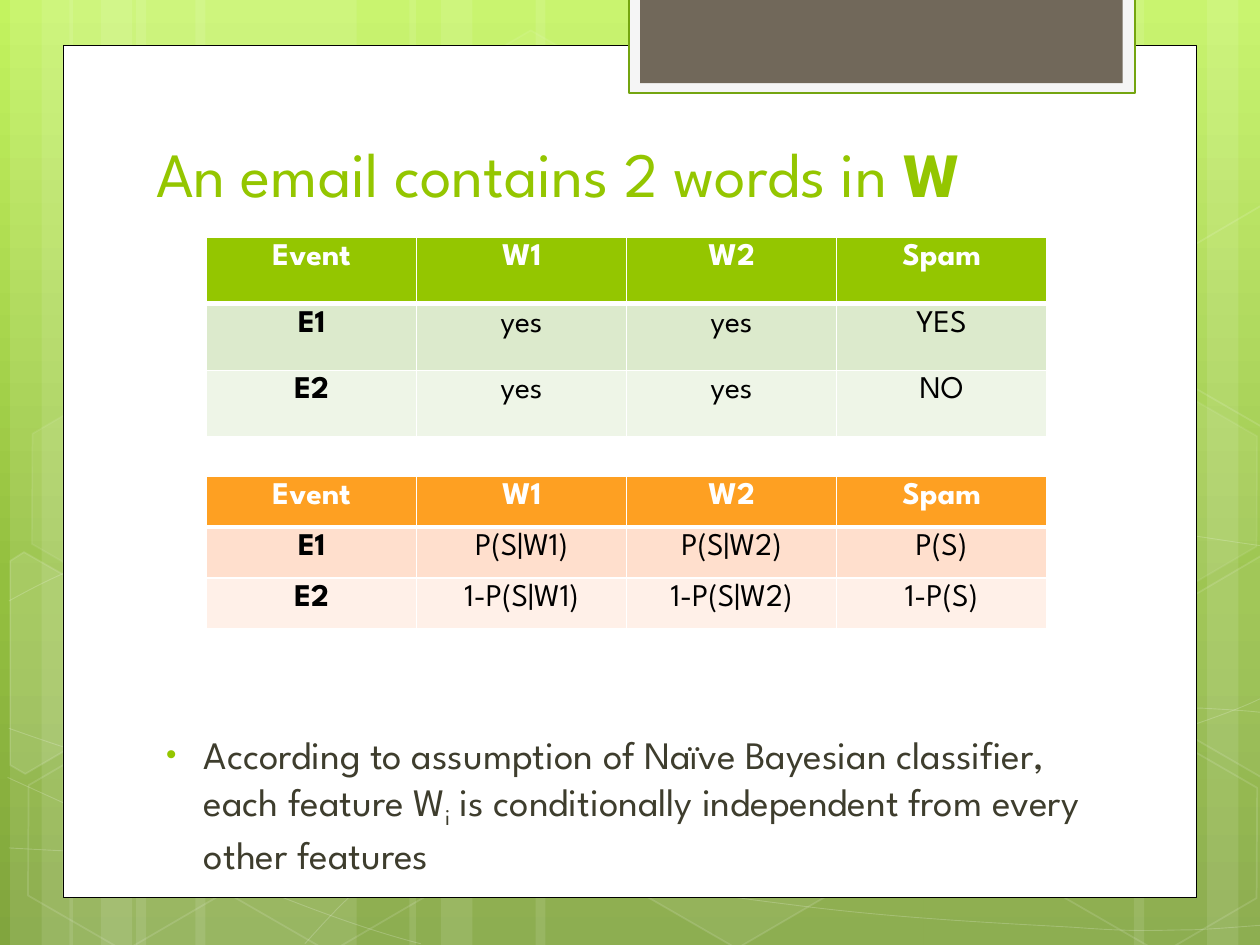
from math import cos, radians, sin
from typing import NamedTuple, Optional

from lxml.etree import SubElement
from pptx import Presentation
from pptx.dml.color import RGBColor
from pptx.enum.shapes import MSO_SHAPE as Preset
from pptx.enum.text import MSO_ANCHOR as Anchor, PP_ALIGN as Align
from pptx.oxml import parse_xml
from pptx.oxml.ns import nsdecls, qn
from pptx.util import Inches, Pt

FONT = "League Spartan"
WHITE = RGBColor(0xFF, 0xFF, 0xFF)
BLACK = RGBColor(0x00, 0x00, 0x00)
LIME = RGBColor(0x94, 0xC6, 0x00)
ORANGE = RGBColor(0xFE, 0xA0, 0x22)
OLIVE = RGBColor(0x3E, 0x3D, 0x2D)
TAB_EDGE = RGBColor(0x74, 0xA5, 0x10)
TAB_RIM = RGBColor(0xF5, 0xF5, 0xF5)
TAB_BROWN = RGBColor(0x71, 0x68, 0x5A)
BACKDROP = ((0, "C3F35F"), (62, "93BF3F"), (100, "81A53E"))
TILT = 30
Point = tuple[float, float]


class Hexagon(NamedTuple):
    left: float
    top: float
    fill_alpha: int
    line_alpha: int


class CutHexagon(NamedTuple):
    center: Point
    corners: list[Point]
    fill_alpha: int


class EventTable(NamedTuple):
    top: float
    height: float
    header: RGBColor
    bands: tuple[RGBColor, RGBColor]
    rows: tuple[tuple[str, ...], ...]


BANDS = ((1.08, 1.75), (0.08, 0.5), (0.33, 0.83), (1.55, 1.75), (0.55, 0.5), (0.8, 0.83),
         (7.33, 1.75), (9.58, 0.5), (9, 0.83), (4.25, 3.08), (3.25, 0.5), (3.5, 0.83))

# Each curve: a start point, then three control points for every Bezier segment
CURVES = (
    [(0.07, 6.73), (0.61, 6.76), (1.15, 6.79), (1.9, 6.78), (2.65, 6.77), (3.58, 6.75),
     (4.58, 6.65), (5.58, 6.55), (7, 6.36), (7.92, 6.17), (8.83, 5.98), (9.77, 5.68),
     (10.07, 5.51)],
    [(0.07, 4.77), (0.36, 4.61), (0.65, 4.46), (1.21, 4.31), (1.78, 4.16), (2.59, 3.94),
     (3.47, 3.87), (4.36, 3.8), (5.44, 3.79), (6.54, 3.87), (7.64, 3.95), (9.47, 4.26),
     (10.07, 4.34)],
    [(0.06, 6.17), (1.27, 6.72), (2.47, 7.27), (3.34, 7.49)],
    [(0.07, 5.78), (0.38, 5.89), (0.7, 6), (1.28, 6.16), (1.86, 6.31), (2.73, 6.56),
     (3.57, 6.73), (4.4, 6.9), (5.45, 7.08), (6.28, 7.18), (7.11, 7.29), (8, 7.33),
     (8.53, 7.36), (9.05, 7.4), (9.19, 7.38), (9.45, 7.38), (9.71, 7.37), (9.89, 7.35),
     (10.07, 7.34)],
    [(2.42, 7.49), (2.6, 7.29), (2.78, 7.09), (3.02, 6.91), (3.26, 6.73), (3.6, 6.53),
     (3.88, 6.39), (4.16, 6.25), (4.33, 6.19), (4.7, 6.09), (5.06, 5.99), (5.73, 5.85),
     (6.08, 5.78), (6.44, 5.71), (6.49, 5.71), (6.8, 5.69), (7.11, 5.66), (7.6, 5.63),
     (7.94, 5.62), (8.29, 5.61), (8.86, 5.62), (8.86, 5.62), (9.08, 5.62), (9.31, 5.62),
     (9.53, 5.62), (9.71, 5.63), (9.88, 5.64), (9.97, 5.65), (10.06, 5.66), (10.03, 5.65),
     (10.06, 5.66)],
)
HEXAGONS = (Hexagon(3.34, 0.36, 4, 8), Hexagon(4.97, 5.89, 6, 12), Hexagon(0.11, 5.91, 0, 12),
            Hexagon(0.14, 3.12, 7, 8), Hexagon(1.74, 5.92, 0, 12), Hexagon(7.53, 4.53, 10, 12),
            Hexagon(8.34, 5.93, 0, 12), Hexagon(8.34, 3.14, 7, 8))
CUT_HEXAGONS = (
    CutHexagon((0.36, 5.35), [(0.08, 4.45), (0.19, 4.38), (0.96, 4.82), (0.95, 5.7),
                              (0.2, 6.14), (0.08, 6.07)], 10),
    CutHexagon((9.85, 5.2), [(9.26, 4.85), (10.01, 4.41), (10.09, 4.46), (10.09, 6.13),
                             (10.02, 6.17), (9.26, 5.73)], 4),
    CutHexagon((9.85, 2.41), [(9.26, 2.07), (10.01, 1.63), (10.1, 1.68), (10.09, 3.35),
                              (10.02, 3.39), (9.26, 2.95)], 0),
)
HEADINGS = ("Event", "W1", "W2", "Spam")
TABLES = (
    EventTable(1.88, 1.59, LIME, (RGBColor(0xDC, 0xEA, 0xCC), RGBColor(0xEE, 0xF5, 0xE7)),
               (HEADINGS, ("E1", "yes", "yes", "YES"), ("E2", "yes", "yes", "NO"))),
    EventTable(3.78, 1.21, ORANGE, (RGBColor(0xFF, 0xDF, 0xCD), RGBColor(0xFF, 0xF0, 0xE8)),
               (HEADINGS, ("E1", "P(S|W1)", "P(S|W2)", "P(S)"),
                ("E2", "1-P(S|W1)", "1-P(S|W2)", "1-P(S)"))),
)


def paint(shape, fill: Optional[RGBColor], line: Optional[RGBColor] = None, width: float = 1,
          fill_alpha: int = 100, line_alpha: int = 100) -> None:
    shape.shadow.inherit = False
    for part, color, alpha in ((shape.fill, fill, fill_alpha),
                               (shape.line.fill, line, line_alpha)):
        if color is None or alpha == 0:
            part.background()
            continue
        part.solid()
        part.fore_color.rgb = color
    if line is not None:
        shape.line.width = Pt(width)
    # Transparency goes inside the colour of the fill and of the line
    properties = shape.element.spPr
    for holder, alpha in ((properties, fill_alpha), (properties.find(qn("a:ln")), line_alpha)):
        color_xml = holder.find(f"{qn('a:solidFill')}/{qn('a:srgbClr')}")
        if color_xml is not None and alpha < 100:
            SubElement(color_xml, qn("a:alpha"), val=str(alpha * 1000))


def add_preset(slide, preset, left: float, top: float, width: float, height: float):
    return slide.shapes.add_shape(preset, Inches(left), Inches(top), Inches(width), Inches(height))


def add_outline(slide, points: list[Point], close: bool):
    start, *rest = [(Inches(x), Inches(y)) for x, y in points]
    builder = slide.shapes.build_freeform(*start)
    builder.add_line_segments(rest, close=close)
    return builder.convert_to_shape()


def add_curve(slide, controls: list[Point]):
    curve = add_outline(slide, controls, close=False)
    # Every three line points become the control points of one Bezier segment
    lines = list(curve.element.iter(qn("a:lnTo")))
    for first in range(0, len(lines), 3):
        outline = lines[first].getparent()
        bezier = SubElement(outline, qn("a:cubicBezTo"))
        for line in lines[first:first + 3]:
            bezier.append(line[0])
            outline.remove(line)
    return curve


def turn_back(point: Point, center: Point) -> Point:
    dx, dy = point[0] - center[0], point[1] - center[1]
    c, s = cos(radians(TILT)), sin(radians(TILT))
    return center[0] + dx * c + dy * s, center[1] - dx * s + dy * c


def add_run(paragraph, text: str, size: float, color: RGBColor, bold: bool = False):
    run = paragraph.add_run()
    run.text = text
    run.font.name, run.font.size, run.font.bold = FONT, Pt(size), bold
    run.font.color.rgb = color
    return run


def add_text(slide, top: float, height: float, anchor):
    frame = slide.shapes.add_textbox(Inches(1.14), Inches(top), Inches(7.68),
                                     Inches(height)).text_frame
    frame.word_wrap = True
    frame.vertical_anchor = anchor
    return frame.paragraphs[0]


def add_borders(cell, top: float, bottom: float) -> None:
    for side, width in (("L", 1), ("R", 1), ("T", top), ("B", bottom)):
        cell._tc.get_or_add_tcPr().append(parse_xml(
            f'<a:ln{side} {nsdecls("a")} w="{Pt(width)}"><a:solidFill>'
            f'<a:srgbClr val="{WHITE}"/></a:solidFill></a:ln{side}>'))


def add_event_table(slide, events: EventTable) -> None:
    table = slide.shapes.add_table(len(events.rows), len(HEADINGS), Inches(1.64),
                                   Inches(events.top), Inches(20 / 3),
                                   Inches(events.height)).table
    for r, texts in enumerate(events.rows):
        for c, text in enumerate(texts):
            cell = table.cell(r, c)
            add_borders(cell, top=3 if r == 1 else 1, bottom=3 if r == 0 else 1)
            cell.fill.solid()
            cell.fill.fore_color.rgb = (events.header, *events.bands)[r]
            paragraph = cell.text_frame.paragraphs[0]
            paragraph.alignment = Align.CENTER
            add_run(paragraph, text, 18, BLACK if r else WHITE, bold=r == 0 or c == 0)


def main() -> None:
    prs = Presentation()
    prs.slide_width, prs.slide_height = Inches(10), Inches(7.5)
    slide = prs.slides.add_slide(prs.slide_layouts[6])

    # Green backdrop
    stops = "".join(f'<a:gs pos="{pos * 1000}"><a:srgbClr val="{color}"/></a:gs>'
                    for pos, color in BACKDROP)
    slide.element.cSld.insert(0, parse_xml(
        f'<p:bg {nsdecls("p", "a")}><p:bgPr><a:gradFill><a:gsLst>{stops}</a:gsLst>'
        '<a:lin ang="5400000" scaled="0"/></a:gradFill><a:effectLst/></p:bgPr></p:bg>'))

    # Pale bands, curves and hexagons
    for left, width in BANDS:
        paint(add_preset(slide, Preset.RECTANGLE, left, 0, width, 7.5), WHITE, fill_alpha=10)
    for controls in CURVES:
        paint(add_curve(slide, controls), None, WHITE, 0.5, line_alpha=20)
    for spot in HEXAGONS:
        hexagon = add_preset(slide, Preset.HEXAGON, spot.left, spot.top, 1.75, 1.52)
        hexagon.adjustments[0] = 0.285
        hexagon.rotation = TILT
        paint(hexagon, WHITE, WHITE, 1, spot.fill_alpha, spot.line_alpha)
    for cut in CUT_HEXAGONS:
        piece = add_outline(slide, [turn_back(p, cut.center) for p in cut.corners], True)
        piece.rotation = TILT
        paint(piece, WHITE, WHITE, 1, cut.fill_alpha, 12)

    # White page with its brown tab
    paint(add_preset(slide, Preset.RECTANGLE, 0.5, 0.36, 9, 6.76), WHITE, BLACK, 0.5)
    paint(add_preset(slide, Preset.RECTANGLE, 4.99, -0.02, 4.02, 0.76), TAB_RIM, TAB_EDGE, 1.25)
    paint(add_preset(slide, Preset.RECTANGLE, 5.08, -0.02, 3.83, 0.68), TAB_BROWN)

    # Title
    title = add_text(slide, 0.47, 1.25, Anchor.BOTTOM)
    add_run(title, "An email contains 2 words in ", 36, LIME)
    add_run(title, "W", 36, LIME, bold=True)

    # Assumption
    assumption = add_text(slide, 5.75, 1.25, Anchor.TOP)
    bullet = assumption._p.get_or_add_pPr()
    bullet.set("marL", str(Inches(0.38)))
    bullet.set("indent", str(Inches(-0.3)))
    SubElement(SubElement(bullet, qn("a:buClr")), qn("a:srgbClr"), val=str(LIME))
    SubElement(bullet, qn("a:buSzPct"), val="76000")
    SubElement(bullet, qn("a:buFont"), typeface="Arial")
    SubElement(bullet, qn("a:buChar"), char="•")
    add_run(assumption, "According to assumption of Naïve Bayesian classifier, each feature W",
            22.2, OLIVE)
    subscript = add_run(assumption, "i", 22.2, OLIVE)
    subscript.font._element.set("baseline", "-25000")
    add_run(assumption, " is conditionally independent from every other features", 22.2, OLIVE)

    # Event tables
    for events in TABLES:
        add_event_table(slide, events)

    prs.save("out.pptx")


if __name__ == "__main__":
    main()
